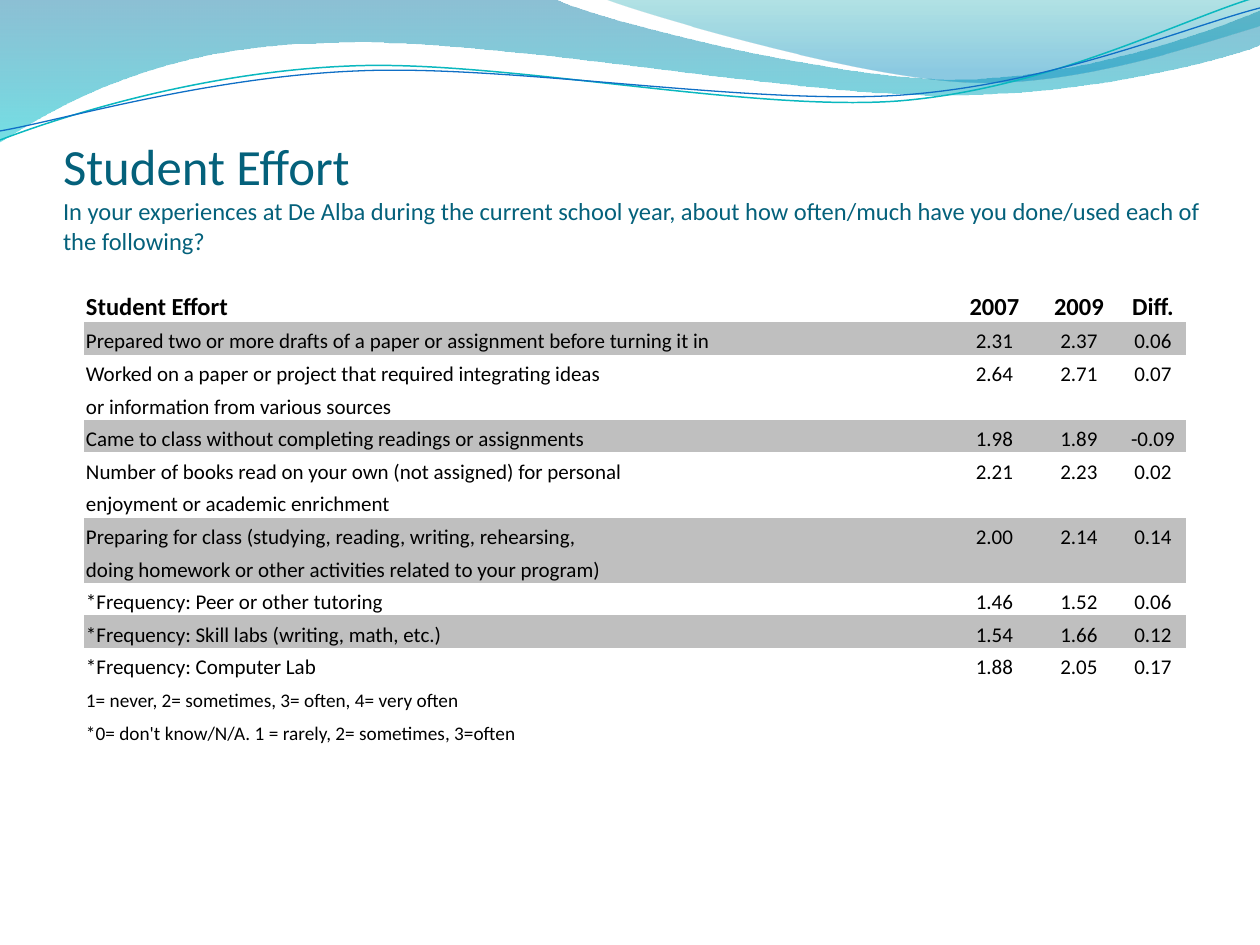
from dataclasses import dataclass

from lxml.etree import SubElement
from pptx import Presentation
from pptx.dml.color import RGBColor
from pptx.enum.text import MSO_ANCHOR, MSO_AUTO_SIZE, PP_ALIGN
from pptx.oxml.ns import qn
from pptx.util import Pt

EMU_PER_PX = 914400 / 126
PLAIN_TABLE_STYLE = "{2D5ABB26-0587-4C30-8999-92F81FD0307C}"


@dataclass(frozen=True)
class Theme:
    font: str = "Calibri"
    heading: str = "04617B"
    ink: str = "000000"
    band: str = "BFBFBF"
    teal_line: str = "0AB8BF"
    blue_line: str = "0F6FC6"
    # Gradient stops: position, colour, opacity in percent
    wide_wave: tuple = ((0, "0074A1", 45), (100, "00C6CF", 55))
    right_wave: tuple = ((0, "00A1A9", 30), (80, "008BBF", 45))
    title_size: int = 29
    heading_size: int = 14
    body_size: int = 12
    note_size: int = 11


def px(length):
    return round(length * EMU_PER_PX)


def apply(target, values):
    for name, value in values.items():
        setattr(target, name, value)


def bend(shape, steps):
    """Merge the three line segments of every cubic step into one curve."""
    outline = next(shape._element.iter(qn("a:path")))
    segments = iter(outline.findall(qn("a:lnTo")))
    for step in steps:
        first = next(segments)
        if len(step) == 6:
            first.tag = qn("a:cubicBezTo")
            for segment in (next(segments), next(segments)):
                first.append(segment[0])
                outline.remove(segment)


class SlideBuilder:
    def __init__(self, deck, theme):
        self.theme = theme
        self.slide = deck.slides.add_slide(deck.slide_layouts[5])

    def style(self, font, size, colour, bold=False):
        apply(font, {"name": self.theme.font, "size": Pt(size), "bold": bold})
        font.color.rgb = RGBColor.from_string(colour)

    def outline(self, start, steps, close):
        """Steps are lines (x, y) or cubic curves (x1, y1, x2, y2, x, y)."""
        points = [(px(x), px(y)) for step in steps
                  for x, y in zip(step[::2], step[1::2])]
        builder = self.slide.shapes.build_freeform(*map(px, start))
        builder.add_line_segments(points, close=close)
        shape = builder.convert_to_shape()
        shape.shadow.inherit = False
        bend(shape, steps)
        return shape

    def wave(self, start, steps, stops):
        shape = self.outline(start, steps, True)
        shape.line.fill.background()
        shape.fill.gradient()
        shape.fill.gradient_angle = 270
        for stop, (position, colour, _) in zip(shape.fill.gradient_stops, stops):
            stop.position = position / 100
            stop.color.rgb = RGBColor.from_string(colour)
        for colour, (_, _, opacity) in zip(shape._element.iter(qn("a:srgbClr")), stops):
            SubElement(colour, qn("a:alpha"), val=str(opacity * 1000))

    def ribbon(self, start, steps, colour, width):
        shape = self.outline(start, steps, False)
        shape.fill.background()
        shape.line.color.rgb = RGBColor.from_string(colour)
        shape.line.width = Pt(width)

    def title(self, box, heading, question):
        title = self.slide.shapes.title
        apply(title, dict(zip(("left", "top", "width", "height"), map(px, box))))
        frame = title.text_frame
        apply(frame, {"margin_left": 0, "margin_right": 0, "margin_top": px(6),
                      "margin_bottom": 0, "word_wrap": True,
                      "auto_size": MSO_AUTO_SIZE.NONE,
                      "vertical_anchor": MSO_ANCHOR.BOTTOM})
        paragraph = frame.paragraphs[0]
        paragraph.alignment = PP_ALIGN.LEFT
        for text, size in ((heading, self.theme.title_size),
                           (question, self.theme.heading_size)):
            if paragraph.runs:
                paragraph.add_line_break()
            run = paragraph.add_run()
            run.text = text
            self.style(run.font, size, self.theme.heading)
        # Bring the title in front of the waves
        self.slide.shapes._spTree.append(title._element)

    def cell(self, cell, text, size, bold, centred, banded):
        apply(cell, {"margin_left": px(2), "margin_right": px(2), "margin_top": px(1),
                     "margin_bottom": 0, "vertical_anchor": MSO_ANCHOR.BOTTOM})
        if banded:
            cell.fill.solid()
            cell.fill.fore_color.rgb = RGBColor.from_string(self.theme.band)
        else:
            cell.fill.background()
        paragraph = cell.text_frame.paragraphs[0]
        if centred:
            paragraph.alignment = PP_ALIGN.CENTER
        if text:
            run = paragraph.add_run()
            run.text = text
            self.style(run.font, size, self.theme.ink, bold)
        else:
            # An empty cell still needs a small type size to keep its row low
            SubElement(paragraph._p, qn("a:endParaRPr"), sz=str(size * 100))

    def table(self, left, top, columns, header_height, body_height, rows):
        row_height = body_height / (len(rows) - 1)
        frame = self.slide.shapes.add_table(
            len(rows), len(columns), px(left), px(top),
            px(sum(columns)), px(header_height + body_height))
        table = frame.table
        apply(table, {"first_row": False, "horz_banding": False})
        table._tbl.tblPr.find(qn("a:tableStyleId")).text = PLAIN_TABLE_STYLE
        for column, width in zip(table.columns, columns):
            column.width = px(width)
        for r, (banded, size, texts) in enumerate(rows):
            table.rows[r].height = px(row_height if r else header_height)
            for c in range(len(columns)):
                text = texts[c] if c < len(texts) else ""
                self.cell(table.cell(r, c), text, size, r == 0, c > 0, banded)


# Survey items: banded, lines of the item, 2007, 2009, difference
ITEMS = [
    (True, ["Prepared two or more drafts of a paper or assignment before turning it in"],
     "2.31", "2.37", "0.06"),
    (False, ["Worked on a paper or project that required integrating ideas",
             "or information from various sources"], "2.64", "2.71", "0.07"),
    (True, ["Came to class without completing readings or assignments"],
     "1.98", "1.89", "-0.09"),
    (False, ["Number of books read on your own (not assigned) for personal",
             "enjoyment or academic enrichment"], "2.21", "2.23", "0.02"),
    (True, ["Preparing for class (studying, reading, writing, rehearsing,",
            "doing homework or other activities related to your program)"],
     "2.00", "2.14", "0.14"),
    (False, ["*Frequency: Peer or other tutoring"], "1.46", "1.52", "0.06"),
    (True, ["*Frequency: Skill labs (writing, math, etc.)"], "1.54", "1.66", "0.12"),
    (False, ["*Frequency: Computer Lab"], "1.88", "2.05", "0.17"),
]
SCALE_NOTES = ["1= never, 2= sometimes, 3= often, 4= very often",
               "*0= don't know/N/A. 1 = rarely, 2= sometimes, 3=often"]


def main():
    deck = Presentation()
    apply(deck, {"slide_width": px(1260), "slide_height": px(945)})
    theme = Theme()
    effort = SlideBuilder(deck, theme)

    # Waves across the top
    effort.wave((0, 0), [(554, -1), (600, 21, 837, 79, 955, 79),
                         (1075, 79, 1207, 33, 1260, 11), (1261, 45),
                         (1238, 55, 1096, 96, 940, 95), (784, 95, 481, 35, 324, 43),
                         (163, 45, 58, 105, -1, 142)], theme.wide_wave)
    effort.wave((604, -1), [(641, 14, 859, 78, 969, 82),
                            (1079, 87, 1211, 40, 1260, 26), (1260, 0)], theme.right_wave)
    effort.ribbon((0, 140), [(60, 117, 199, 72, 349, 66), (498, 59, 747, 112, 898, 101),
                             (1049, 89, 1182, 19, 1257, -3)], theme.teal_line, 0.85)
    effort.ribbon((0, 131), [(59, 121, 207, 77, 357, 71), (508, 64, 752, 106, 903, 95),
                             (1053, 84, 1186, 27, 1260, 8)], theme.blue_line, 0.75)

    # Title and survey question
    effort.title((63, 97, 1144, 158), "Student Effort",
                 "In your experiences at De Alba during the current school year, about how "
                 "often/much have you done/used each of the following?")

    # Results table
    rows = [(False, theme.heading_size, ["Student Effort", "2007", "2009", "Diff."])]
    for banded, lines, *scores in ITEMS:
        for i, line in enumerate(lines):
            rows.append((banded, theme.body_size, [line] if i else [line, *scores]))
    rows += [(False, theme.note_size, [note]) for note in SCALE_NOTES]
    effort.table(84, 284, (867, 87, 82, 66), 38, 424, rows)

    deck.save("out.pptx")


if __name__ == "__main__":
    main()
